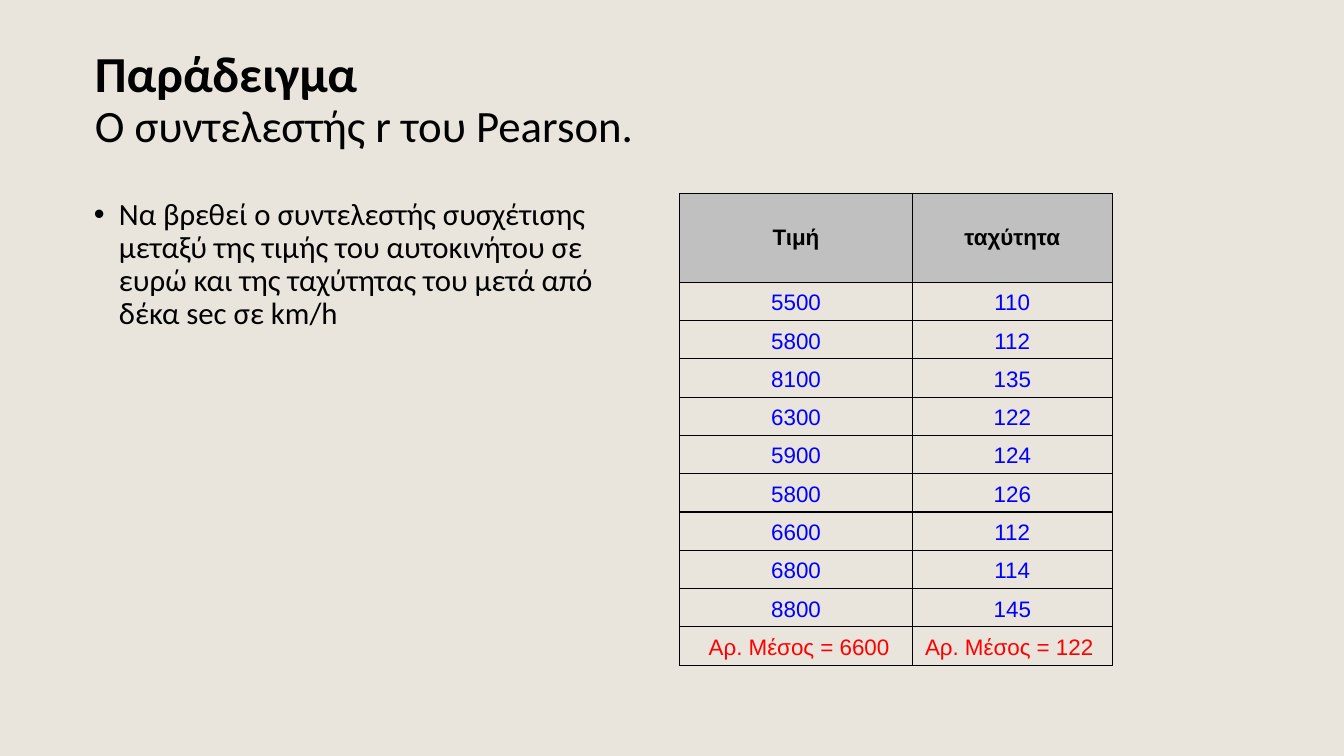
from lxml import etree
from pptx import Presentation
from pptx.dml.color import RGBColor
from pptx.enum.text import MSO_ANCHOR, MSO_AUTO_SIZE, PP_ALIGN
from pptx.oxml.ns import qn
from pptx.util import Pt

PX = 9144
LEFT, CENTER = PP_ALIGN.LEFT, PP_ALIGN.CENTER
TOP, MIDDLE, BOTTOM = MSO_ANCHOR.TOP, MSO_ANCHOR.MIDDLE, MSO_ANCHOR.BOTTOM
FIXED = MSO_AUTO_SIZE.NONE

HEAD = ("Τιμή", "ταχύτητα")
CARS = [
    (5500, 110), (5800, 112), (8100, 135), (6300, 122), (5900, 124),
    (5800, 126), (6600, 112), (6800, 114), (8800, 145),
]
MEANS = ("\u00a0Αρ. Μέσος = 6600", "Αρ. Μέσος = 122\u00a0")
TASK = ("Να βρεθεί ο συντελεστής συσχέτισης μεταξύ της τιμής του αυτοκινήτου "
        "σε ευρώ και της ταχύτητας του μετά από δέκα sec σε km/h")


def px(n):
    return n * PX


def color(code):
    return RGBColor.from_string(code)


def write(par, text, size=16, font="Arial", ink="000000", bold=False, align=LEFT):
    par.alignment = align
    run = par.add_run()
    run.text = text
    run.font.size = Pt(size)
    run.font.name = font
    run.font.bold = bold
    run.font.color.rgb = color(ink)


def place(shape, left, top, width, height, anchor):
    shape.left, shape.top = px(left), px(top)
    shape.width, shape.height = px(width), px(height)
    frame = shape.text_frame
    frame.auto_size = FIXED
    frame.word_wrap = True
    frame.vertical_anchor = anchor
    par = frame.paragraphs[0]
    par.line_spacing = 0.9
    par.space_before = Pt(0)
    return par


def bullet(par, indent):
    props = par._p.get_or_add_pPr()
    props.set("marL", str(px(indent)))
    props.set("indent", str(px(-indent)))
    font = etree.SubElement(props, qn("a:buFont"))
    font.set("typeface", "Arial")
    etree.SubElement(props, qn("a:buChar")).set("char", "•")


def border(cell):
    props = cell._tc.get_or_add_tcPr()
    for i, side in enumerate(("lnL", "lnR", "lnT", "lnB")):
        line = etree.Element(qn("a:" + side), w=str(Pt(1)))
        fill = etree.SubElement(line, qn("a:solidFill"))
        etree.SubElement(fill, qn("a:srgbClr")).set("val", "000000")
        props.insert(i, line)


def grid(slide, rows, left, top, widths, heights):
    frame = slide.shapes.add_table(
        len(rows), len(widths), px(left), px(top), px(sum(widths)), px(sum(heights)))
    table = frame.table
    table.first_row = table.horz_banding = False
    for col, width in zip(table.columns, widths):
        col.width = px(width)
    last = len(rows) - 1
    for r, row in enumerate(rows):
        table.rows[r].height = px(heights[r])
        ink = {0: "000000", last: "FF0000"}.get(r, "0000FF")
        for c, value in enumerate(row):
            cell = table.cell(r, c)
            if r == 0:
                cell.fill.solid()
                cell.fill.fore_color.rgb = color("C0C0C0")
            else:
                cell.fill.background()
            border(cell)
            cell.vertical_anchor = BOTTOM if r else MIDDLE
            write(cell.text_frame.paragraphs[0], str(value),
                  ink=ink, bold=r == 0, align=CENTER)


def main():
    deck = Presentation()
    deck.slide_width, deck.slide_height = px(1333), px(750)
    slide = deck.slides.add_slide(deck.slide_layouts[1])
    back = slide.background.fill
    back.solid()
    back.fore_color.rgb = color("E9E5DC")

    title = place(slide.shapes.title, 84, 33, 1167, 133, MIDDLE)
    write(title, "Παράδειγμα", size=36, font="Calibri", bold=True)
    title.add_line_break()
    write(title, "Ο συντελεστής r του Pearson.", size=32, font="Calibri")

    body = place(slide.placeholders[1], 83, 192, 572, 467, TOP)
    bullet(body, 25)
    write(body, TASK, size=22, font="Calibri")

    rows = [HEAD, *CARS, MEANS]
    grid(slide, rows, 674, 192, (231, 198), [88] + [38] * (len(rows) - 1))
    deck.save("out.pptx")


if __name__ == "__main__":
    main()
